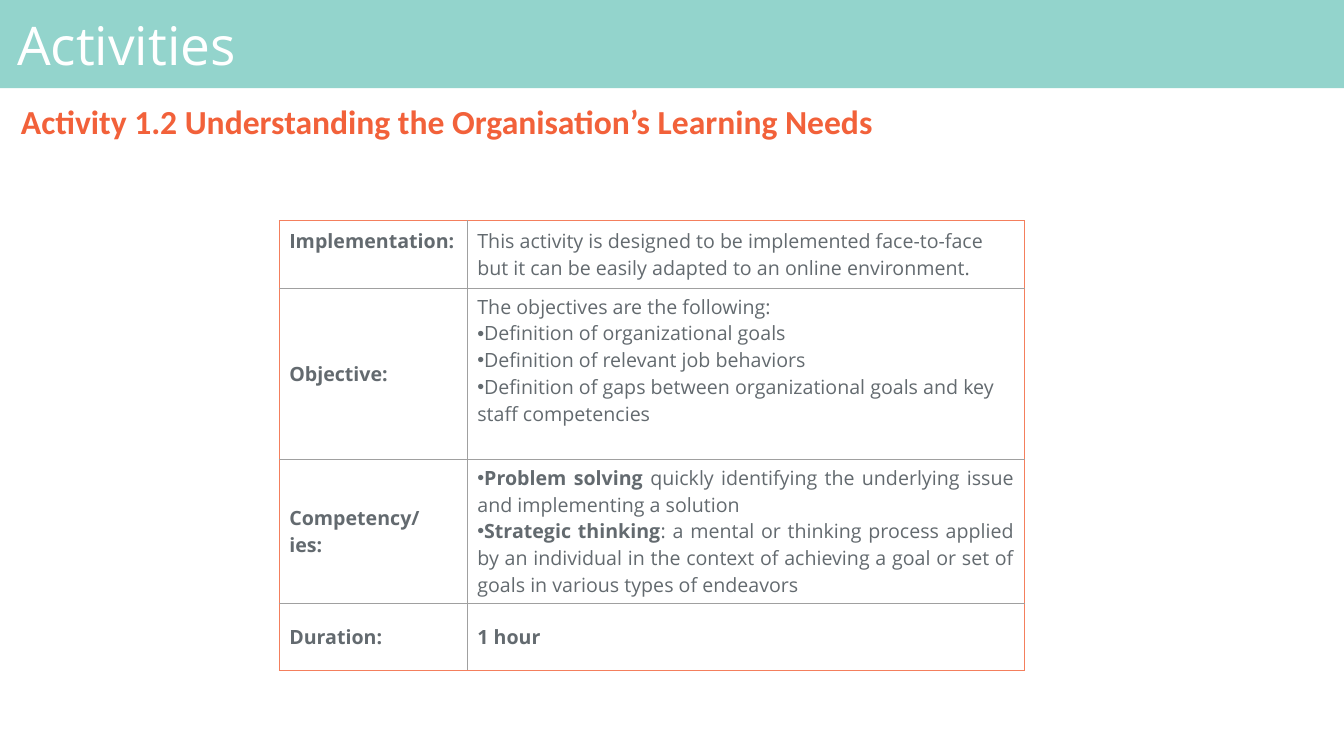
from dataclasses import dataclass

from lxml import etree
from pptx import Presentation
from pptx.dml.color import RGBColor
from pptx.enum.shapes import MSO_SHAPE
from pptx.enum.text import MSO_ANCHOR, MSO_AUTO_SIZE, PP_ALIGN
from pptx.oxml.ns import qn
from pptx.util import Cm, Pt

RECTANGLE = MSO_SHAPE.RECTANGLE
TOP, MIDDLE = MSO_ANCHOR.TOP, MSO_ANCHOR.MIDDLE
LEFT, JUSTIFY = PP_ALIGN.LEFT, PP_ALIGN.JUSTIFY
NO_AUTOFIT = MSO_AUTO_SIZE.NONE
TITLE_ONLY = 5


@dataclass(frozen=True)
class Theme:
    band: str = "93D4CC"
    title: str = "FFFFFF"
    heading: str = "F2613A"
    body: str = "636A6F"
    outer_border: str = "F47F5D"
    inner_border: str = "A0A0A0"
    main_font: str = "Open Sans"
    heading_font: str = "Calibri"
    title_size: int = 38
    heading_size: int = 24
    body_size: int = 14
    border_width: float = 0.75


THEME = Theme()
SLIDE_WIDTH, SLIDE_HEIGHT = Cm(33.87), Cm(19.05)
TEXT_LEFT, TEXT_WIDTH = Cm(0.28), Cm(33.17)
COLUMN_WIDTHS = (4.74, 14.03)
ROW_HEIGHTS = (1.7, 4.31, 3.6, 1.7)

# Each paragraph is a list of (text, bold) runs.
OBJECTIVES = (
    "Definition of organizational goals",
    "Definition of relevant job behaviors",
    "Definition of gaps between organizational goals and key staff competencies",
)
COMPETENCIES = (
    [("Problem solving", True),
     (" quickly identifying the underlying issue and implementing a solution", False)],
    [("Strategic thinking", True),
     (": a mental or thinking process applied by an individual in the context of "
      "achieving a goal or set of goals in various types of endeavors", False)],
)


def write(paragraph, text, *, size=THEME.body_size, font=THEME.main_font,
          color=THEME.body, bold=False, align=LEFT, spacing=None):
    run = paragraph.add_run()
    run.text = text
    run.font.size = Pt(size)
    run.font.name = font
    run.font.bold = bold
    run.font.color.rgb = RGBColor.from_string(color)
    paragraph.alignment = align
    if spacing:
        paragraph.line_spacing = spacing


def add_color(parent, color):
    fill = etree.SubElement(parent, qn("a:solidFill"))
    etree.SubElement(fill, qn("a:srgbClr"), val=color)


def add_bullet(paragraph):
    properties = paragraph._p.get_or_add_pPr()
    properties.set("marL", "0")
    properties.set("indent", str(-Cm(0.25)))
    bullet_color = etree.SubElement(properties, qn("a:buClr"))
    etree.SubElement(bullet_color, qn("a:srgbClr"), val=THEME.body)
    etree.SubElement(properties, qn("a:buFont"), typeface="Arial")
    etree.SubElement(properties, qn("a:buChar"), char="•")


def set_borders(cell, colors):
    """Draw the left, right, top and bottom borders in the given colors."""
    properties = cell._tc.get_or_add_tcPr()
    for index, (side, color) in enumerate(zip("LRTB", colors)):
        line = etree.Element(qn(f"a:ln{side}"), w=str(Pt(THEME.border_width)))
        add_color(line, color)
        properties.insert(index, line)


def set_frame(frame, horizontal, vertical):
    frame.word_wrap = True
    frame.auto_size = NO_AUTOFIT
    frame.vertical_anchor = MIDDLE
    frame.margin_left = frame.margin_right = Cm(horizontal)
    frame.margin_top = frame.margin_bottom = Cm(vertical)


def add_title(slide, text):
    title = slide.shapes.title
    title.left, title.top = TEXT_LEFT, Cm(0.23)
    title.width, title.height = TEXT_WIDTH, Cm(1.98)
    set_frame(title.text_frame, 0.15, 0.15)
    write(title.text_frame.paragraphs[0], text, size=THEME.title_size,
          color=THEME.title, spacing=0.9)

    band = slide.shapes.add_shape(RECTANGLE, 0, 0, SLIDE_WIDTH, Cm(2.22))
    band.shadow.inherit = False
    band.fill.solid()
    band.fill.fore_color.rgb = RGBColor.from_string(THEME.band)
    band.line.fill.background()
    title._element.addprevious(band._element)


def add_heading(slide, text):
    heading = slide.shapes.add_textbox(TEXT_LEFT, Cm(2.36), TEXT_WIDTH, Cm(1.52))
    set_frame(heading.text_frame, 0.25, 0.13)
    write(heading.text_frame.paragraphs[0], text, size=THEME.heading_size,
          font=THEME.heading_font, color=THEME.heading, bold=True,
          align=JUSTIFY, spacing=0.9)


def fill_cell(cell, paragraphs, *, bullets_from=None, align=LEFT):
    """Write the paragraphs, with bullets from the given index onwards."""
    for index, runs in enumerate(paragraphs):
        frame = cell.text_frame
        paragraph = frame.add_paragraph() if index else frame.paragraphs[0]
        for text, bold in runs:
            write(paragraph, text, bold=bold, align=align)
        if bullets_from is not None and index >= bullets_from:
            add_bullet(paragraph)


def add_activity_table(slide):
    last_row, last_column = len(ROW_HEIGHTS) - 1, len(COLUMN_WIDTHS) - 1
    table = slide.shapes.add_table(
        len(ROW_HEIGHTS), len(COLUMN_WIDTHS), Cm(7.04), Cm(5.56),
        Cm(sum(COLUMN_WIDTHS)), Cm(sum(ROW_HEIGHTS))).table
    table.first_row = table.horz_banding = False
    for column, width in zip(table.columns, COLUMN_WIDTHS):
        column.width = Cm(width)
    for row_index, height in enumerate(ROW_HEIGHTS):
        table.rows[row_index].height = Cm(height)
        for column_index in range(len(COLUMN_WIDTHS)):
            cell = table.cell(row_index, column_index)
            cell.fill.background()
            cell.vertical_anchor = MIDDLE
            cell.margin_left = cell.margin_right = Cm(0.25)
            cell.margin_top = cell.margin_bottom = Cm(0.13)
            on_edge = (column_index == 0, column_index == last_column,
                       row_index == 0, row_index == last_row)
            set_borders(cell, [THEME.outer_border if edge else THEME.inner_border
                               for edge in on_edge])

    labels = ("Implementation:", "Objective:", "Competency/ies:", "Duration:")
    for row_index, label in enumerate(labels):
        fill_cell(table.cell(row_index, 0), [[(label, True)]])
    implementation_label = table.cell(0, 0)
    implementation_label.vertical_anchor = TOP
    implementation_label.margin_top = Cm(0.18)
    table.cell(2, 0).margin_right = Cm(0.6)

    fill_cell(table.cell(0, 1), [[(
        "This activity is designed to be implemented face-to-face but it can be "
        "easily adapted to an online environment.", False)]])
    objectives = ("The objectives are the following:", *OBJECTIVES)
    fill_cell(table.cell(1, 1), [[(text, False)] for text in objectives],
              bullets_from=1)
    table.cell(1, 1).vertical_anchor = TOP
    fill_cell(table.cell(2, 1), COMPETENCIES, bullets_from=0, align=JUSTIFY)
    fill_cell(table.cell(3, 1), [[("1 hour", True)]])


def main():
    presentation = Presentation()
    presentation.slide_width, presentation.slide_height = SLIDE_WIDTH, SLIDE_HEIGHT
    slide = presentation.slides.add_slide(presentation.slide_layouts[TITLE_ONLY])
    add_title(slide, "Activities")
    add_activity_table(slide)
    add_heading(slide, "Activity 1.2 Understanding the Organisation’s Learning Needs")
    presentation.save("out.pptx")


if __name__ == "__main__":
    main()
